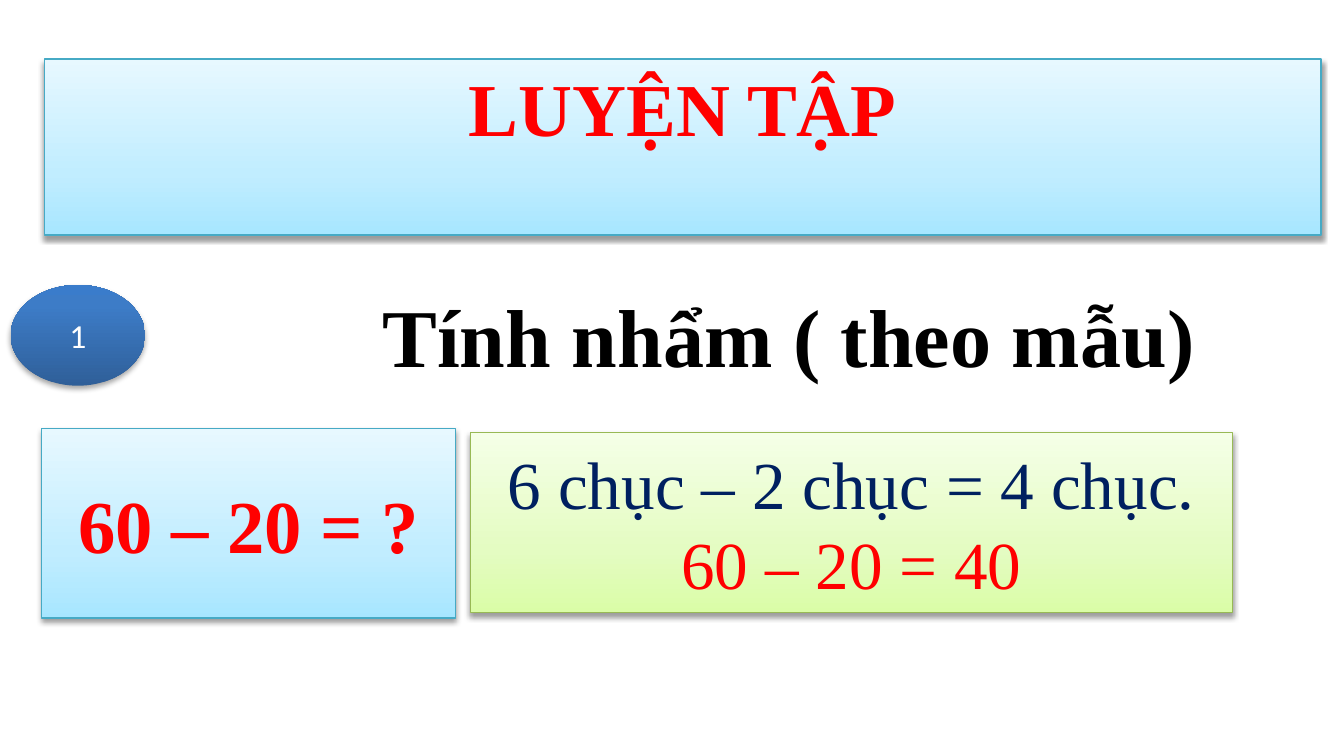
import lxml.etree
import pptx
import pptx.dml.color
import pptx.enum.shapes
import pptx.enum.text
import pptx.oxml.ns
import pptx.util

Inches = pptx.util.Inches
Pt = pptx.util.Pt
SHAPES = pptx.enum.shapes.MSO_SHAPE
ANCHOR = pptx.enum.text.MSO_ANCHOR
qn = pptx.oxml.ns.qn
SERIF = "Times New Roman"
BLUE = [(0, "A7E6FF"), (35, "C1EDFF"), (100, "E7F8FF")]
GREEN = [(0, "DAFDA7"), (35, "E4FCC2"), (100, "F5FFE7")]
DARK_BLUE = [(0, "2F5F99"), (80, "3D7CC7"), (100, "3A7CCB")]


def rgb(color):
    return pptx.dml.color.RGBColor.from_string(color)


def write(shape, text, size, colors, font=SERIF, bold=False, anchor=ANCHOR.MIDDLE, top=0.05):
    """Fill the shape with centred lines, one colour for each line."""
    frame = shape.text_frame
    frame.word_wrap = True
    frame.vertical_anchor = anchor
    frame.margin_top = Inches(top)
    frame.text = text
    for paragraph, color in zip(frame.paragraphs, colors):
        paragraph.alignment = pptx.enum.text.PP_ALIGN.CENTER
        text_font = paragraph.runs[0].font
        text_font.size = Pt(size)
        text_font.name = font
        text_font.bold = bold
        text_font.color.rgb = rgb(color)


deck = pptx.Presentation()
deck.slide_width = Inches(10)
deck.slide_height = deck.slide_width * 9 // 16
slide = deck.slides.add_slide(deck.slide_layouts[6])

panels = [
    (SHAPES.OVAL, (0.08, 2.12, 1, 0.75), DARK_BLUE, None, 35, 1.8,
     "1", dict(size=18, colors=["FFFFFF"], font="Calibri")),
    (SHAPES.RECTANGLE, (0.31, 3.19, 3.08, 1.41), BLUE, "46AAC5", 38, 1.6,
     "60 – 20 = ?", dict(size=40, colors=["FF0000"], bold=True)),
    (SHAPES.RECTANGLE, (3.5, 3.22, 5.67, 1.34), GREEN, "98B955", 38, 1.6,
     "6 chục – 2 chục = 4 chục.\n60 – 20 = 40", dict(size=36, colors=["002060", "FF0000"])),
    (SHAPES.RECTANGLE, (0.33, 0.44, 9.5, 1.31), BLUE, "46AAC5", 38, 1.6,
     "LUYỆN TẬP", dict(size=40, colors=["FF0000"], bold=True, anchor=ANCHOR.TOP, top=0.02)),
]
for kind, box, gradient, outline, opacity, distance, text, style in panels:
    panel = slide.shapes.add_shape(kind, *map(Inches, box))

    panel.fill.gradient()
    panel.fill.gradient_angle = 90
    stops = panel._element.spPr.find(".//" + qn("a:gsLst"))
    for default_stop in list(stops):
        stops.remove(default_stop)
    for position, color in gradient:
        stop = lxml.etree.SubElement(stops, qn("a:gs"), pos=str(position * 1000))
        lxml.etree.SubElement(stop, qn("a:srgbClr"), val=color)

    if outline:
        panel.line.color.rgb = rgb(outline)
        panel.line.width = Pt(0.75)
    else:
        panel.line.fill.background()

    panel.shadow.inherit = False
    effects = panel._element.spPr.find(qn("a:effectLst"))
    shadow = lxml.etree.SubElement(
        effects, qn("a:outerShdw"), blurRad=str(Pt(3.1)), dist=str(Pt(distance)),
        dir="5400000", rotWithShape="0")
    shade = lxml.etree.SubElement(shadow, qn("a:srgbClr"), val="000000")
    lxml.etree.SubElement(shade, qn("a:alpha"), val=str(opacity * 1000))

    write(panel, text, **style)

exercise = slide.shapes.add_textbox(Inches(1.49), Inches(2), Inches(7.66), Inches(0.98))
exercise.text_frame.margin_left = Inches(1.2)
write(exercise, "Tính nhẩm ( theo mẫu)", size=44, colors=["000000"], bold=True)

deck.save("out.pptx")
